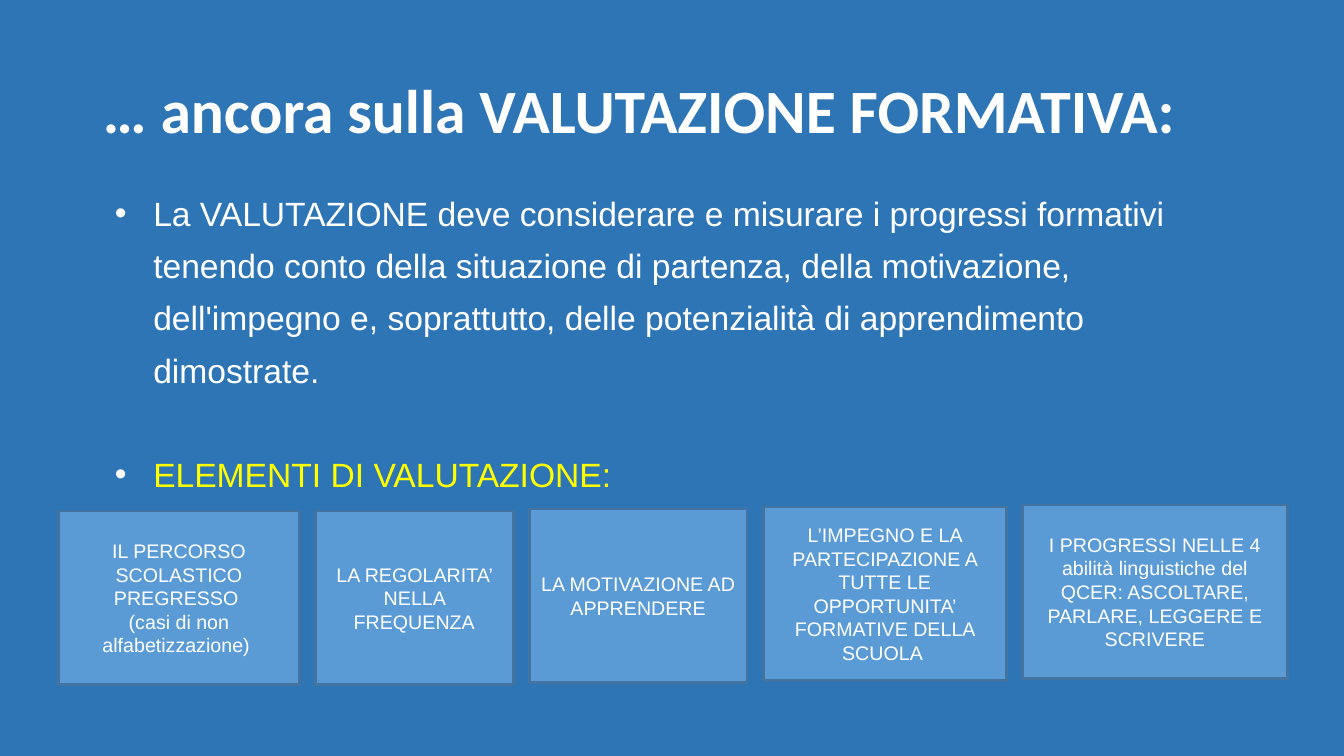
from dataclasses import dataclass

from lxml.etree import SubElement
from pptx import Presentation
from pptx.dml.color import RGBColor as Rgb
from pptx.enum.shapes import MSO_SHAPE as Shape
from pptx.enum.text import MSO_ANCHOR as Anchor, MSO_AUTO_SIZE as AutoSize, PP_ALIGN as Align
from pptx.oxml.ns import qn
from pptx.util import Pt

PX = 9144  # EMU per px, 100 px to the inch


@dataclass(frozen=True)
class Theme:
    background: str = "2E75B6"
    text: str = "FFFFFF"
    accent: str = "FFFF00"
    box: str = "5B9BD5"
    box_line: str = "43739E"
    title_font: str = "Calibri"
    body_font: str = "Arial"
    title_size: int = 44
    body_size: int = 24
    box_size: int = 14


THEME = Theme()

TITLE = "… ancora sulla VALUTAZIONE FORMATIVA:"
PRINCIPLE = (
    "La VALUTAZIONE deve considerare e misurare i progressi formativi tenendo conto "
    "della situazione di partenza, della motivazione, dell'impegno e, soprattutto, "
    "delle potenzialità di apprendimento dimostrate."
)
ELEMENTS_HEADING = "ELEMENTI DI VALUTAZIONE:"

# Evaluation elements: top, width, paragraphs
ELEMENTS = [
    (507, 239, ["IL PERCORSO SCOLASTICO PREGRESSO ", "(casi di non alfabetizzazione) "]),
    (507, 196, ["LA REGOLARITA’ NELLA FREQUENZA"]),
    (505, 216, ["LA MOTIVAZIONE AD APPRENDERE"]),
    (503, 241, ["L’IMPEGNO E LA PARTECIPAZIONE A TUTTE LE OPPORTUNITA’ FORMATIVE DELLA SCUOLA "]),
    (501, 263, ["I PROGRESSI NELLE 4 abilità linguistiche del QCER: ASCOLTARE, PARLARE, "
                "LEGGERE E SCRIVERE"]),
]
ELEMENTS_LEFT, ELEMENT_HEIGHT, ELEMENT_GAP = 58, 172, 16


def px(*lengths):
    return [length * PX for length in lengths]


def write(frame, text, *, size, font=THEME.body_font, color=THEME.text, bold=False,
          align=Align.LEFT, spacing=1.0, before=0):
    """Write one paragraph, filling the empty first one if there is one."""
    first = frame.paragraphs[0]
    paragraph = frame.add_paragraph() if first.runs else first
    paragraph.alignment = align
    paragraph.line_spacing = spacing
    paragraph.space_before = Pt(before)
    run = paragraph.add_run()
    run.text = text
    run.font.name = font
    run.font.size = Pt(size)
    run.font.bold = bold
    run.font.color.rgb = Rgb.from_string(color)
    return paragraph


def add_bullet(paragraph, *, indent, hanging):
    properties = paragraph._p.get_or_add_pPr()
    properties.set("marL", str(indent * PX))
    properties.set("indent", str(-hanging * PX))
    bullet_color = SubElement(properties, qn("a:buClr"))
    SubElement(bullet_color, qn("a:srgbClr"), val=THEME.text)
    SubElement(properties, qn("a:buFont"), typeface=THEME.body_font)
    SubElement(properties, qn("a:buChar"), char="•")


def place(placeholder, left, top, width, height, anchor):
    placeholder.left, placeholder.top, placeholder.width, placeholder.height = px(
        left, top, width, height)
    frame = placeholder.text_frame
    frame.word_wrap = True
    frame.auto_size = AutoSize.NONE
    frame.vertical_anchor = anchor
    return frame


def add_element(slide, left, top, width, paragraphs):
    box = slide.shapes.add_shape(Shape.RECTANGLE, *px(left, top, width, ELEMENT_HEIGHT))
    box.shadow.inherit = False
    box.fill.solid()
    box.fill.fore_color.rgb = Rgb.from_string(THEME.box)
    box.line.color.rgb = Rgb.from_string(THEME.box_line)
    box.line.width = Pt(2)
    frame = box.text_frame
    frame.word_wrap = True
    frame.vertical_anchor = Anchor.MIDDLE
    for text in paragraphs:
        write(frame, text, size=THEME.box_size, align=Align.CENTER)


def main():
    deck = Presentation()
    deck.slide_width, deck.slide_height = px(1333, 750)
    slide = deck.slides.add_slide(deck.slide_layouts[1])
    slide.background.fill.solid()
    slide.background.fill.fore_color.rgb = Rgb.from_string(THEME.background)

    # Title
    title = place(slide.shapes.title, 92, 40, 1150, 145, Anchor.MIDDLE)
    write(title, TITLE, size=THEME.title_size, font=THEME.title_font, bold=True, spacing=0.9)

    # Bulleted text
    body = place(slide.placeholders[1], 92, 174, 1128, 285, Anchor.TOP)
    for text, color, before in [(PRINCIPLE, THEME.text, 0),
                                (ELEMENTS_HEADING, THEME.accent, 37)]:
        item = write(body, text, size=THEME.body_size, color=color, spacing=1.3, before=before)
        add_bullet(item, indent=50, hanging=38)

    # Row of evaluation elements
    left = ELEMENTS_LEFT
    for top, width, paragraphs in ELEMENTS:
        add_element(slide, left, top, width, paragraphs)
        left += width + ELEMENT_GAP

    deck.save("out.pptx")


if __name__ == "__main__":
    main()
